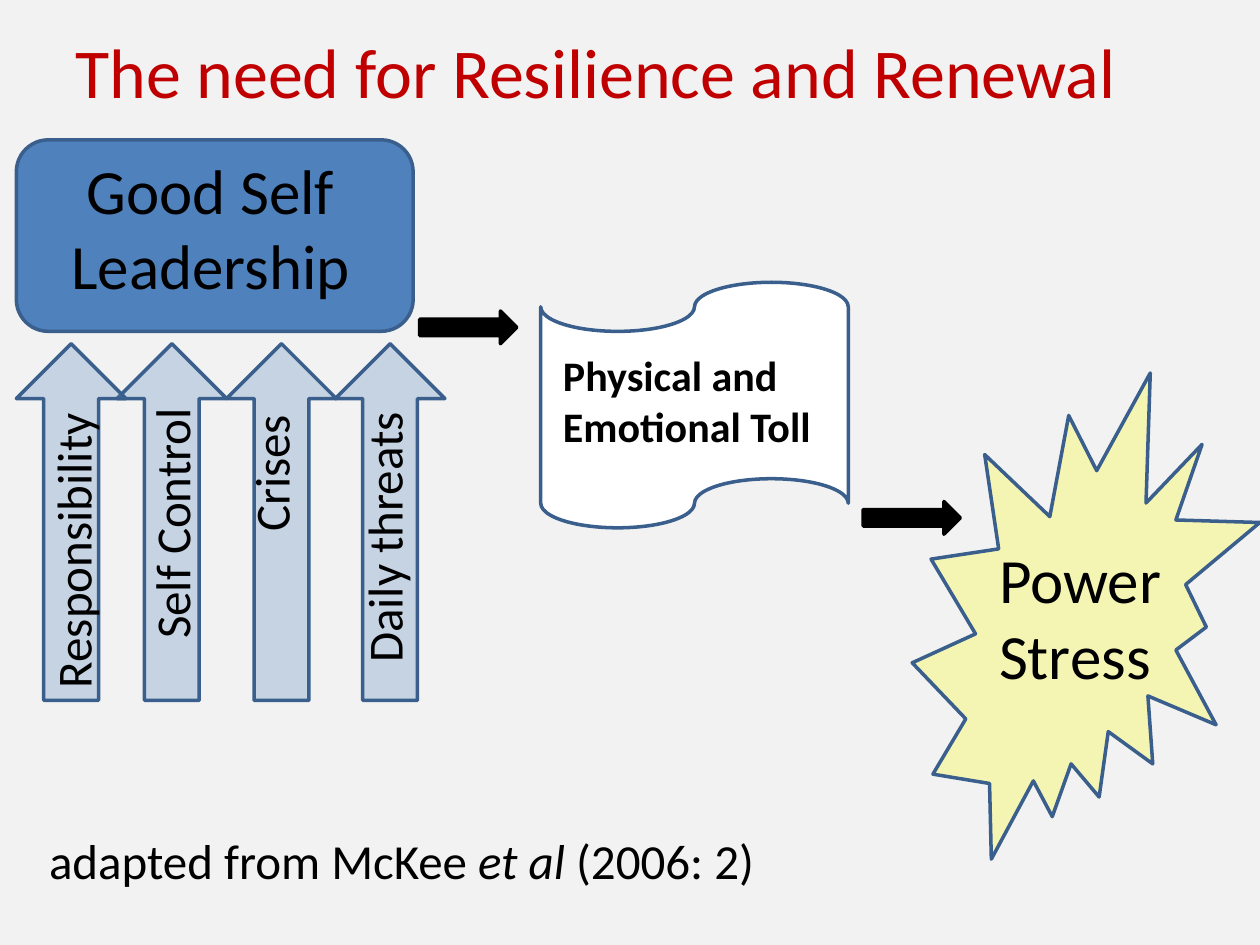
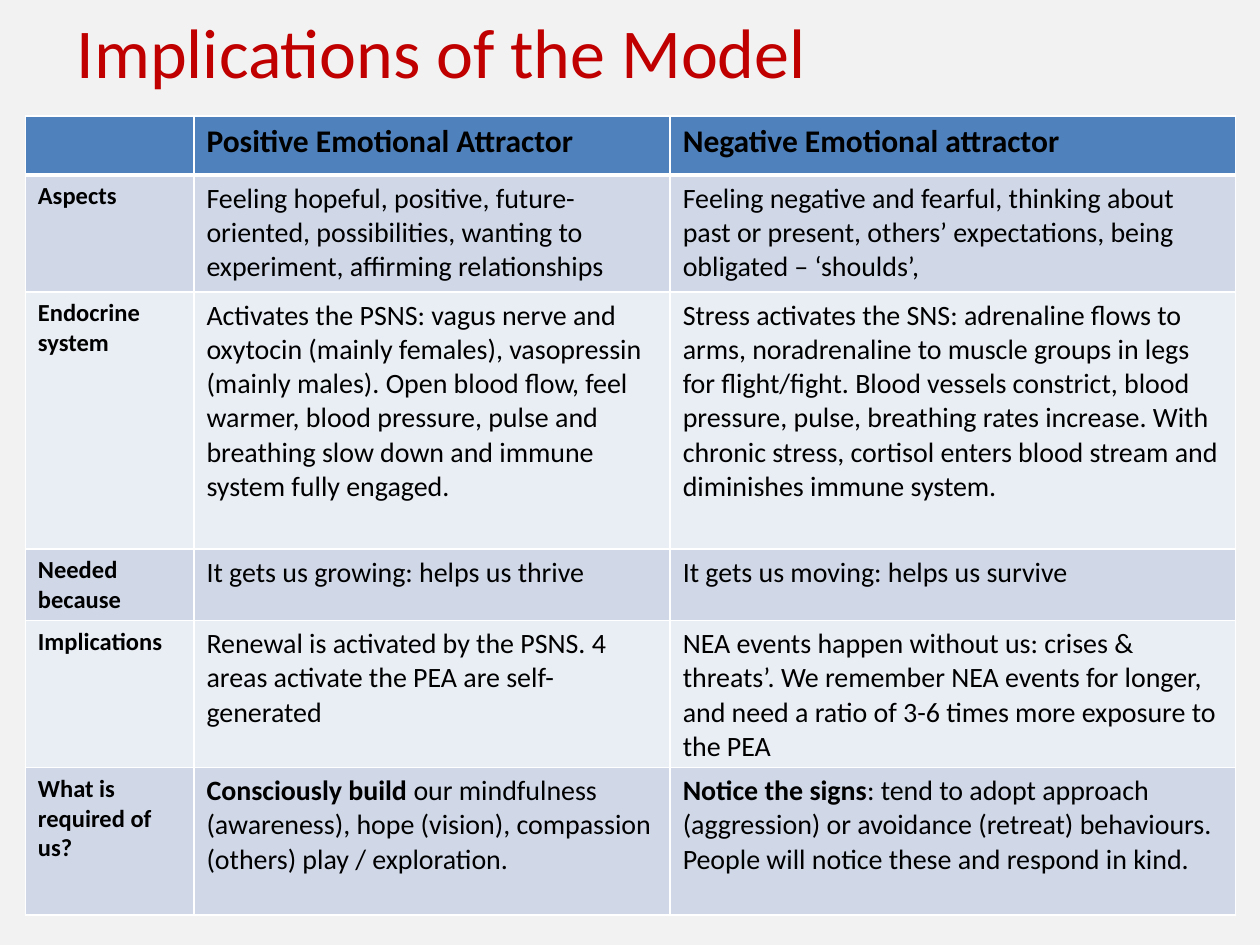
from lxml import etree
from pptx import Presentation
from pptx.dml.color import RGBColor
from pptx.enum import shapes, text
from pptx.oxml import ns
from pptx.util import Cm, Pt

FONT = "Calibri"
PAPER = RGBColor(0xF2, 0xF2, 0xF2)
TITLE_RED = RGBColor(0xC0, 0x00, 0x00)
BLACK = RGBColor(0x00, 0x00, 0x00)
WHITE = RGBColor(0xFF, 0xFF, 0xFF)
BLUE = RGBColor(0x4F, 0x81, 0xBD)
OUTLINE = RGBColor(0x3A, 0x5F, 0x8C)
YELLOW = RGBColor(0xFF, 0xFF, 0x00)
BAND_DARK = RGBColor(0xD0, 0xD8, 0xE8)
BAND_LIGHT = RGBColor(0xE9, 0xED, 0xF4)

SHAPE = shapes.MSO_SHAPE
STEP_SIZE = (1.96, 0.66)

PRESSURES = [
    ("Responsibility", 0, 1.13, 6.17),
    ("Self Control", 2.03, 3.12, 5.18),
    ("Crises", 4.24, 5.12, 3.02),
    ("Daily threats", 6.43, 7.4, 5.66),
]

COLUMN_WIDTHS = [3.4, 9.6, 11.4]
ROW_HEIGHTS = [1.19, 2.36, 5.18, 1.07, 2.29, 2.97]
HEADINGS = ["", "Positive Emotional Attractor", "Negative Emotional attractor"]
ATTRACTORS = [
    ("Aspects",
     [("Feeling hopeful, positive, future-oriented, possibilities, wanting to "
       "experiment, affirming relationships", "")],
     [("Feeling negative and fearful, thinking about past or present, others’ "
       "expectations, being obligated – ‘shoulds’,", "")]),
    ("Endocrine system",
     [("Activates the PSNS: vagus nerve and oxytocin (mainly females), vasopressin "
       "(mainly males). Open blood flow, feel warmer, blood pressure, pulse and "
       "breathing slow down and immune system fully engaged.", "")],
     [("Stress activates the SNS: adrenaline flows to arms, noradrenaline to muscle "
       "groups in legs for flight/fight. Blood vessels constrict, blood pressure, "
       "pulse, breathing rates increase. With chronic stress, cortisol enters blood "
       "stream and diminishes immune system.", "")]),
    ("Needed because",
     [("It gets us growing: helps us thrive", "")],
     [("It gets us moving: helps us survive", "")]),
    ("Implications",
     [("Renewal is activated by the PSNS. 4 areas activate the PEA are "
       "self-generated", "")],
     [("NEA events happen without us: crises & threats’. We remember NEA events for "
       "longer, and need a ratio of 3-6 times more exposure to the PEA", "")]),
    ("What is required of us?",
     [("Consciously build ", "bold"),
      ("our mindfulness (awareness), hope (vision), compassion (others) play / "
       "exploration.", "")],
     [("Notice the signs", "bold"),
      (": tend to adopt approach (aggression) or avoidance (retreat) behaviours. "
       "People will notice these and respond in kind.", "")]),
]


def write(frame, spans, size, color=BLACK, align=text.PP_ALIGN.LEFT):
    para = frame.paragraphs[0]
    para.alignment = align
    for wording, style in spans:
        span = para.add_run()
        span.text = wording
        span.font.name = FONT
        span.font.size = Pt(size)
        span.font.color.rgb = color
        span.font.bold = style == "bold"
        span.font.italic = style == "italic"


def add_text(page, box, spans, size, anchor=text.MSO_ANCHOR.TOP, **look):
    label = page.shapes.add_textbox(*map(Cm, box))
    label.text_frame.word_wrap = True
    label.text_frame.vertical_anchor = anchor
    write(label.text_frame, spans, size, **look)
    return label


def add_figure(page, kind, box, fill, line=OUTLINE, opacity=100):
    figure = page.shapes.add_shape(kind, *map(Cm, box))
    figure.shadow.inherit = False
    figure.fill.solid()
    figure.fill.fore_color.rgb = fill
    figure.line.color.rgb = line
    figure.line.width = Pt(2)
    if opacity < 100:
        tint = figure.fill._xPr.find(".//" + ns.qn("a:srgbClr"))
        etree.SubElement(tint, ns.qn("a:alpha"), val=str(opacity * 1000))
    return figure


def add_page(deck, title, box):
    page = deck.slides.add_slide(deck.slide_layouts[6])
    page.background.fill.solid()
    page.background.fill.fore_color.rgb = PAPER
    add_text(page, box, [(title, "")], 40, text.MSO_ANCHOR.MIDDLE, color=TITLE_RED)
    return page


def add_step(page, left, top):
    add_figure(page, SHAPE.RIGHT_ARROW, (left, top, *STEP_SIZE), BLACK, BLACK)


def add_toll(page, left, top, width, height):
    tape = add_figure(page, SHAPE.FLOWCHART_PUNCHED_TAPE,
                      (left, top, width, height), WHITE)
    tape.rotation = 180
    add_text(page, (left + 0.2, top + 1.24, width - 0.4, 2.31),
             [("Physical and Emotional Toll", "bold")], 24)


def add_pressures(page, left, top, width, height):
    for _, arrow_left, _, _ in reversed(PRESSURES):
        add_figure(page, SHAPE.UP_ARROW,
                   (left + arrow_left, top + height + 0.25, 2.21, 7.19), BLUE, opacity=27)
    add_figure(page, SHAPE.ROUNDED_RECTANGLE, (left, top, width, height), BLUE)
    add_text(page, (left + 0.41, top + 0.1, 7.01, 3.33),
             [("Good Self Leadership", "")], 36, align=text.PP_ALIGN.CENTER)
    depth = 1.45
    for name, _, center, length in PRESSURES:
        middle = top + 5.13 + length / 2
        label = add_text(page, (left + center - length / 2, middle - depth / 2,
                                length, depth), [(name, "")], 28)
        label.rotation = 270


def add_stress(page, left, top, width, height):
    add_figure(page, SHAPE.EXPLOSION2, (left, top, width, height), YELLOW, opacity=26)
    add_text(page, (left + 1.5, top + 3.25, 3.81, 3.33), [("Power Stress", "")], 36)


def add_resilience_page(deck):
    page = add_page(deck, "The need for Resilience and Renewal",
                    (1.27, 0.33, 22.86, 2.18))
    add_step(page, 8.46, 6.27)
    add_toll(page, 10.9, 5.69, 6.2, 4.95)
    add_step(page, 17.4, 10.11)
    add_pressures(page, 0.33, 2.82, 8, 3.86)
    add_stress(page, 18.39, 7.52, 7.01, 9.8)
    add_text(page, (0.74, 16.61, 16.97, 1.45),
             [("adapted from McKee ", ""), ("et al ", "italic"), ("(2006: 2)", "")], 28)


def style_cell(cell, fill, top=1, bottom=1):
    properties = cell._tc.get_or_add_tcPr()
    for side, weight in zip("LRTB", (1, 1, top, bottom)):
        border = etree.SubElement(properties, ns.qn(f"a:ln{side}"), w=str(Pt(weight)))
        paint = etree.SubElement(border, ns.qn("a:solidFill"))
        etree.SubElement(paint, ns.qn("a:srgbClr"), val=str(WHITE))
    cell.fill.solid()
    cell.fill.fore_color.rgb = fill


def add_attractor_table(page, left, top):
    box = (left, top, sum(COLUMN_WIDTHS), sum(ROW_HEIGHTS))
    table = page.shapes.add_table(len(ROW_HEIGHTS), len(COLUMN_WIDTHS),
                                  *map(Cm, box)).table
    for column, width in zip(table.columns, COLUMN_WIDTHS):
        column.width = Cm(width)
    for row, height in zip(table.rows, ROW_HEIGHTS):
        row.height = Cm(height)
    for index, heading in enumerate(HEADINGS):
        cell = table.cell(0, index)
        style_cell(cell, BLUE, bottom=3)
        if heading:
            write(cell.text_frame, [(heading, "bold")], 18)
    for number, (aspect, positive, negative) in enumerate(ATTRACTORS, 1):
        band = BAND_DARK if number % 2 else BAND_LIGHT
        for index, spans in enumerate(([(aspect, "bold")], positive, negative)):
            cell = table.cell(number, index)
            style_cell(cell, band, top=3 if number == 1 else 1)
            write(cell.text_frame, spans, 16 if index else 14)


def add_implications_page(deck):
    page = add_page(deck, "Implications of the Model", (1.3, -0.08, 22.86, 2.21))
    add_attractor_table(page, 0.51, 2.34)


def main():
    deck = Presentation()
    deck.slide_width = Cm(25.4)
    deck.slide_height = Cm(19.05)
    add_resilience_page(deck)
    add_implications_page(deck)
    deck.save("out.pptx")


if __name__ == "__main__":
    main()
